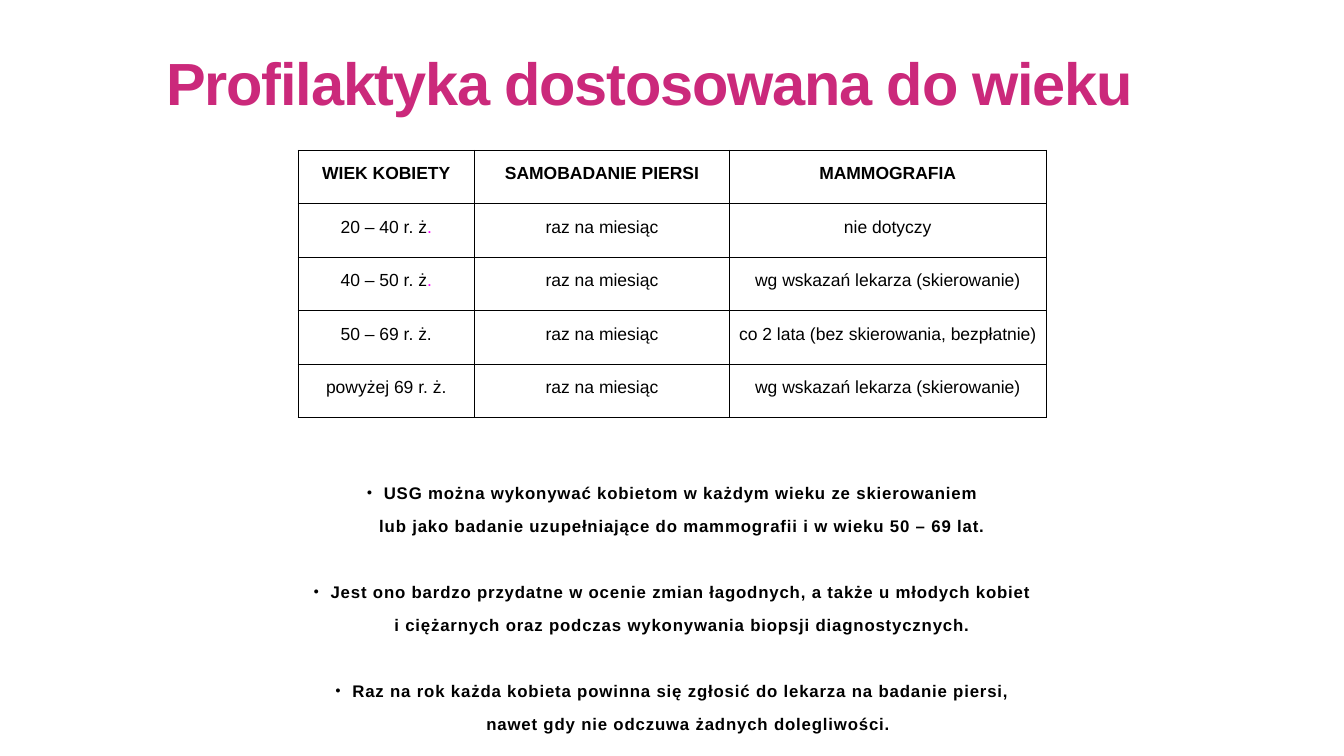
from lxml import etree
from pptx import Presentation
from pptx.dml.color import RGBColor
from pptx.enum.text import MSO_ANCHOR, PP_ALIGN
from pptx.oxml.ns import qn
from pptx.util import Emu, Pt

CENTER, LEFT = PP_ALIGN.CENTER, PP_ALIGN.LEFT
BOTTOM, TOP = MSO_ANCHOR.BOTTOM, MSO_ANCHOR.TOP
EMU_PER_PX = 9144  # 100 px to the inch

BLACK, PINK, MAGENTA = "000000", "CB297B", "FF00FF"
BORDER_WIDTH = Pt(0.96)
BULLET_INDENT = 34

COLUMN_WIDTHS = [351, 505, 629]
ROW_HEIGHT = 106
MONTHLY = "raz na miesiąc"
REFERRAL = "wg wskazań lekarza (skierowanie)"
# A cell is a list of (text, colour) runs.
SCHEDULE = [
    [[("WIEK KOBIETY", BLACK)], [("SAMOBADANIE PIERSI", BLACK)], [("MAMMOGRAFIA", BLACK)]],
    [[("20 – 40 r. ż", BLACK), (".", MAGENTA)], [(MONTHLY, BLACK)], [("nie dotyczy", BLACK)]],
    [[("40 – 50 r. ż", BLACK), (".", MAGENTA)], [(MONTHLY, BLACK)], [(REFERRAL, BLACK)]],
    [[("50 – 69 r. ż.", BLACK)], [(MONTHLY, BLACK)],
     [("co 2 lata (bez skierowania, bezpłatnie)", BLACK)]],
    [[("powyżej 69 r. ż.", BLACK)], [(MONTHLY, BLACK)], [(REFERRAL, BLACK)]],
]

# Bulleted line, its continuation, indent of the continuation.
ADVICE = [
    ("USG można wykonywać kobietom w każdym wieku ze skierowaniem",
     "lub jako badanie uzupełniające do mammografii i w wieku 50 – 69 lat.", 40),
    ("Jest ono bardzo przydatne w ocenie zmian łagodnych, a także u młodych kobiet",
     "i ciężarnych oraz podczas wykonywania biopsji diagnostycznych.", 40),
    ("Raz na rok każda kobieta powinna się zgłosić do lekarza na badanie piersi,",
     "nawet gdy nie odczuwa żadnych dolegliwości.", 64),
]


def px(length):
    return Emu(length * EMU_PER_PX)


def rgb(hex_colour):
    return RGBColor.from_string(hex_colour)


def add_run(paragraph, text, size, colour, bold=False, spacing=0):
    """Add an Arial run; spacing is letter spacing in hundredths of a point."""
    run = paragraph.add_run()
    run.text = text
    run.font.name = "Arial"
    run.font.size = Pt(size)
    run.font.bold = bold
    run.font.color.rgb = rgb(colour)
    if spacing:
        run.font._element.set("spc", str(spacing))


def add_text_frame(slide, box, anchor):
    frame = slide.shapes.add_textbox(*map(px, box)).text_frame
    frame.word_wrap = True
    frame.vertical_anchor = anchor
    frame.margin_left = frame.margin_right = px(6)
    frame.margin_top = frame.margin_bottom = px(6)
    return frame


def add_title(slide, box):
    paragraph = add_text_frame(slide, box, BOTTOM).paragraphs[0]
    paragraph.alignment = LEFT
    paragraph.line_spacing = 0.8
    add_run(paragraph, "Profilaktyka dostosowana do wieku", 85, PINK, True, -170)


def add_borders(cell):
    properties = cell._tc.get_or_add_tcPr()
    for position, side in enumerate(("lnL", "lnR", "lnT", "lnB")):
        line = etree.Element(qn(f"a:{side}"), w=str(BORDER_WIDTH))
        fill = etree.SubElement(line, qn("a:solidFill"))
        etree.SubElement(fill, qn("a:srgbClr"), val=BLACK)
        properties.insert(position, line)


def fill_cell(cell, runs, bold):
    cell.margin_left = cell.margin_right = px(13)
    cell.margin_top = cell.margin_bottom = px(5)
    cell.fill.background()
    add_borders(cell)
    paragraph = cell.text_frame.paragraphs[0]
    paragraph.alignment = CENTER
    paragraph.line_spacing = Pt(44)
    for text, colour in runs:
        add_run(paragraph, text, 25, colour, bold)


def add_schedule(slide, left, top):
    size = (sum(COLUMN_WIDTHS), ROW_HEIGHT * len(SCHEDULE))
    table = slide.shapes.add_table(
        len(SCHEDULE), len(COLUMN_WIDTHS), px(left), px(top), *map(px, size)).table
    table.horz_banding = False
    for column, width in zip(table.columns, COLUMN_WIDTHS):
        column.width = px(width)
    for row_index, row in enumerate(SCHEDULE):
        table.rows[row_index].height = px(ROW_HEIGHT)
        for column_index, runs in enumerate(row):
            fill_cell(table.cell(row_index, column_index), runs, bold=row_index == 0)


def set_indent(paragraph, margin, bulleted):
    properties = paragraph._p.get_or_add_pPr()
    properties.set("marL", str(px(margin)))
    properties.set("indent", str(px(-margin if bulleted else 0)))
    if bulleted:
        etree.SubElement(properties, qn("a:buFont"), typeface="Times New Roman")
        etree.SubElement(properties, qn("a:buChar"), char="•")
    else:
        etree.SubElement(properties, qn("a:buNone"))


def add_advice(slide, box):
    frame = add_text_frame(slide, box, TOP)
    for index, (opening, continuation, indent) in enumerate(ADVICE):
        first = frame.add_paragraph() if index else frame.paragraphs[0]
        second = frame.add_paragraph()
        set_indent(first, BULLET_INDENT, bulleted=True)
        set_indent(second, indent, bulleted=False)
        if index:
            first.space_before = Pt(47)
        for paragraph, text in ((first, opening), (second, continuation)):
            paragraph.alignment = CENTER
            paragraph.line_spacing = Pt(47)
            add_run(paragraph, text, 24, BLACK, True, 120)


def main():
    presentation = Presentation()
    presentation.slide_width = px(2667)
    presentation.slide_height = px(1500)
    slide = presentation.slides.add_slide(presentation.slide_layouts[6])
    add_title(slide, (324, 60, 2018, 178))
    add_schedule(slide, 591, 298)
    add_advice(slide, (350, 927, 1967, 524))
    presentation.save("out.pptx")


if __name__ == "__main__":
    main()
